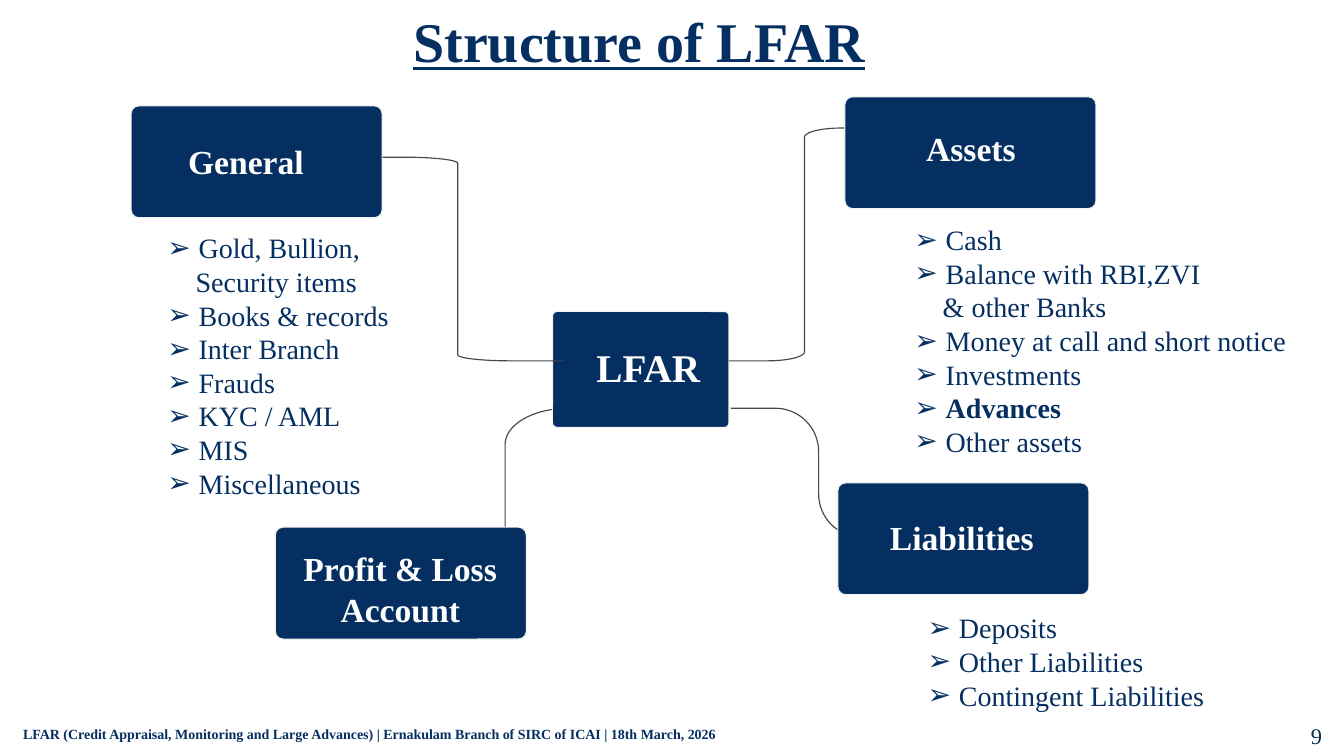
from math import cos, pi, sin

from lxml import etree
from pptx import Presentation
from pptx.dml.color import RGBColor as RGB
from pptx.enum.shapes import MSO_SHAPE as Kind
from pptx.enum.text import MSO_ANCHOR as Anchor, MSO_AUTO_SIZE as Fit, PP_ALIGN as Align
from pptx.oxml.ns import qn
from pptx.util import Inches, Pt

INK = {"navy": "052F61", "slate": "0A304A", "white": "FFFFFF", "edge": "F2F2F2", "wire": "484848"}
FACE = "Times New Roman"
HANG = 0.31
SIZE = (2.49, 1.11)


class Page:
    """Holds the style and the slide, and draws each kind of element."""

    def __init__(self, deck):
        self.slide = deck.slides.add_slide(deck.slide_layouts[4])
        self.shapes = self.slide.shapes
        back = self.slide.background.fill
        back.solid()
        back.fore_color.rgb = RGB.from_string(INK["white"])

    def holder(self, idx):
        return next(p for p in self.slide.placeholders if p.placeholder_format.idx == idx)

    def place(self, shape, at):
        shape.left, shape.top, shape.width, shape.height = map(Inches, at)
        frame = shape.text_frame
        frame.auto_size = Fit.NONE
        frame.word_wrap = True
        frame.vertical_anchor = Anchor.TOP
        return frame

    def run(self, para, text, size, color="navy", bold=False):
        run = para.add_run()
        run.text = text
        font = run.font
        font.name, font.size, font.bold = FACE, Pt(size), bold
        font.color.rgb = RGB.from_string(INK[color])
        para.line_spacing = Pt(size * 1.2)
        para.space_before = Pt(0)
        return run

    def title(self, text, at):
        para = self.place(self.shapes.title, at).paragraphs[0]
        para.alignment = Align.CENTER
        self.run(para, text, 40, bold=True).font.underline = True

    def bullets(self, idx, at, items, plain=(), strong=()):
        frame = self.place(self.holder(idx), at)
        for i, item in enumerate(items):
            para = frame.add_paragraph() if i else frame.paragraphs[0]
            props = para._p.get_or_add_pPr()
            if item in plain:
                props.set("marL", str(Inches(0.28)))
                props.set("indent", "0")
                etree.SubElement(props, qn("a:buNone"))
            else:
                props.set("marL", str(Inches(HANG)))
                props.set("indent", str(Inches(-HANG)))
                etree.SubElement(props, qn("a:buChar")).set("char", "➢")
            self.run(para, item, 20, bold=item in strong)

    def text(self, text, at, size, color="navy", bold=True, align=Align.LEFT):
        frame = self.place(self.shapes.add_textbox(0, 0, 0, 0), at)
        para = frame.paragraphs[0]
        para.alignment = align
        for i, line in enumerate(text.split("\n")):
            if i:
                para.add_line_break()
            self.run(para, line, size, color, bold)
        return frame

    def label(self, text, at, size=24):
        frame = self.text(text, at, size, "white", align=Align.CENTER)
        frame.word_wrap = False
        frame.margin_left = frame.margin_right = frame.margin_top = frame.margin_bottom = 0

    def box(self, x, y, size=SIZE, curve=0.07):
        box = self.shapes.add_shape(Kind.ROUNDED_RECTANGLE, *map(Inches, (x, y, *size)))
        box.adjustments[0] = curve
        box.shadow.inherit = False
        box.fill.solid()
        box.fill.fore_color.rgb = RGB.from_string(INK["navy"])
        box.line.color.rgb = RGB.from_string(INK["edge"])
        box.line.width = Pt(0.75)

    def wire(self, start, mid, end, rx, ry):
        """Draws an open line from start to end, with rounded turns at mid."""
        (x0, y0), (x1, y1) = start, end
        side = 1 if mid > x0 else -1
        fall = 1 if y1 > y0 else -1
        turn = [i * pi / 32 for i in range(17)]
        dots = [(mid - side * rx * (1 - sin(t)), y0 + fall * ry * (1 - cos(t))) for t in turn]
        dots += [(mid + (1 if x1 > mid else -1) * rx * (1 - cos(t)),
                  y1 - fall * ry * (1 - sin(t))) for t in turn]
        dots.append(end)
        pen = self.shapes.build_freeform(Inches(x0), Inches(y0))
        pen.add_line_segments([(Inches(x), Inches(y)) for x, y in dots], close=False)
        line = pen.convert_to_shape()
        line.shadow.inherit = False
        line.fill.background()
        line.line.color.rgb = RGB.from_string(INK["wire"])
        line.line.width = Pt(0.83)


def main():
    deck = Presentation()
    deck.slide_width, deck.slide_height = Inches(13.33), Inches(7.5)
    page = Page(deck)
    spare = page.holder(1)._element
    spare.getparent().remove(spare)

    page.title("Structure of LFAR", (0.22, 0.01, 12.24, 0.77))
    page.wire((6.26, 4.05), 5.01, (3.92, 5.79), 0.63, 0.36)
    page.box(5.48, 3.09, (1.75, 1.15), 0.04)
    page.box(2.73, 5.23)
    page.wire((7.23, 3.58), 7.98, (8.63, 1.27), 0.37, 0.09)
    page.wire((7.25, 4.05), 8.12, (8.88, 5.33), 0.43, 0.43)
    page.wire((5.59, 3.58), 4.54, (3.62, 1.56), 0.53, 0.06)
    for x, y in ((1.3, 1.05), (8.31, 4.79), (8.38, 0.96)):
        page.box(x, y)

    page.label("LFAR", (5.91, 3.41, 1.04, 0.47), 28)
    page.label("Profit & Loss\nAccount", (3, 5.44, 1.94, 0.81))
    page.label("General", (1.86, 1.4, 1.16, 0.4))
    page.label("Liabilities", (8.82, 5.13, 1.44, 0.4))
    page.label("Assets", (9.18, 1.27, 0.9, 0.4))

    page.bullets(2, (1.56, 2.24, 4, 2.79),
                 ["Gold, Bullion,", "Security items", "Books & records", "Inter Branch",
                  "Frauds", "KYC / AML", "MIS", "Miscellaneous"], plain=["Security items"])
    page.bullets(4, (8.97, 2.16, 3.96, 2.46),
                 ["Cash", "Balance with RBI,ZVI", "& other Banks", "Money at call and short notice",
                  "Investments", "Advances", "Other assets"],
                 plain=["& other Banks"], strong=["Advances"])
    page.bullets(3, (9.1, 6.01, 4.23, 1.11),
                 ["Deposits", "Other Liabilities", "Contingent Liabilities"])

    page.text("LFAR (Credit Appraisal, Monitoring and Large Advances) | "
              "Ernakulam Branch of SIRC of ICAI | 18th March, 2026", (0.13, 7.15, 8.25, 0.35), 10)
    number = page.text("9", (11.96, 6.75, 1.25, 0.73), 16, "slate", False, Align.RIGHT)
    number.vertical_anchor = Anchor.BOTTOM
    deck.save("out.pptx")


if __name__ == "__main__":
    main()
